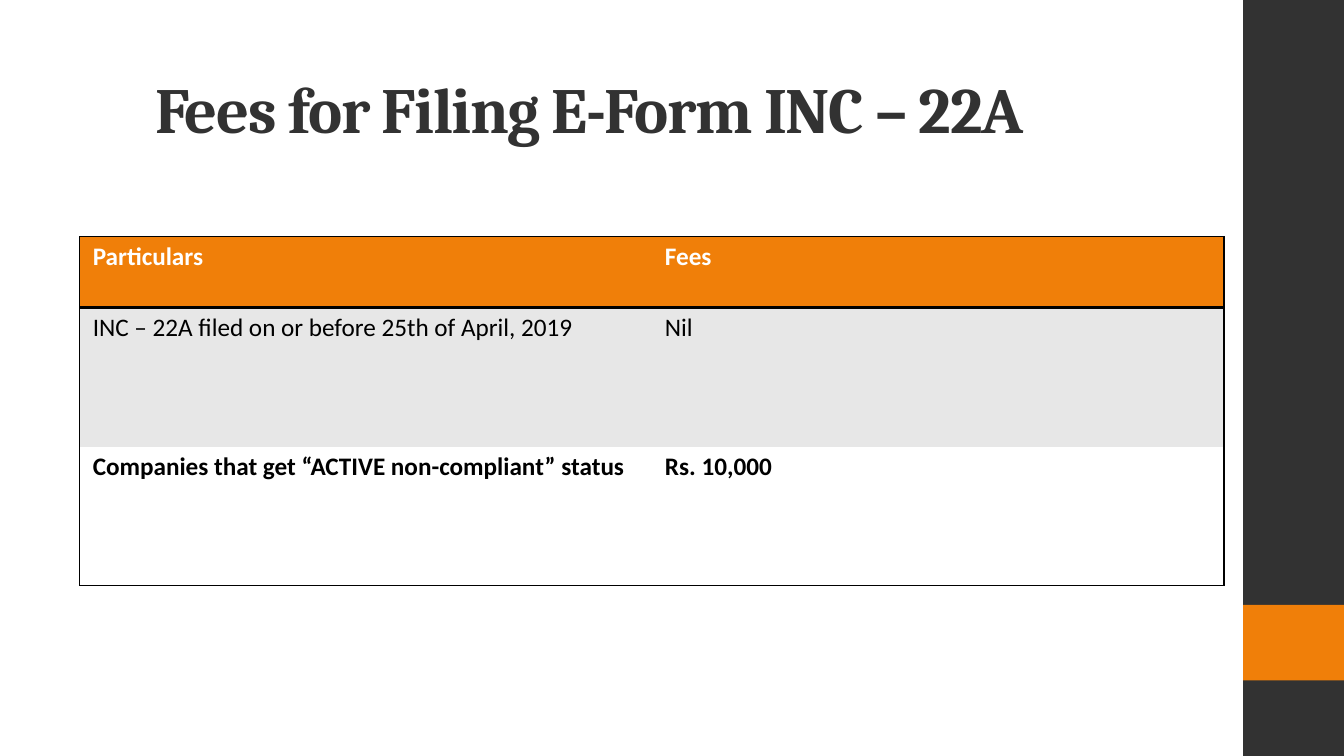
from lxml.etree import SubElement
from pptx import Presentation
from pptx.dml.color import RGBColor
from pptx.enum.shapes import MSO_SHAPE
from pptx.enum.text import MSO_ANCHOR
from pptx.oxml.ns import qn
from pptx.util import Inches, Pt

TITLE = "Fees for Filing E-Form INC – 22A"
FEE_ROWS = [
    ("Particulars", "Fees"),
    ("INC – 22A filed on or before 25th of April, 2019", "Nil"),
    ("Companies that get “ACTIVE non-compliant” status", "Rs. 10,000"),
]

DARK = RGBColor(0x32, 0x32, 0x32)
ORANGE = RGBColor(0xF0, 0x7F, 0x09)
GREY = RGBColor(0xE7, 0xE7, 0xE7)
WHITE = RGBColor(0xFF, 0xFF, 0xFF)
BLACK = RGBColor(0, 0, 0)

ROW_STYLES = [
    (0.7, ORANGE, WHITE, True),
    (1.38, GREY, BLACK, False),
    (1.38, WHITE, BLACK, True),
]
SIDEBAR_PARTS = [(0, 7.5, DARK), (6, 0.75, ORANGE)]


def format_run(run, font, size, color, bold):
    run.font.name = font
    run.font.size = Pt(size)
    run.font.color.rgb = color
    run.font.bold = bold


def add_sidebar(slide):
    for top, height, color in SIDEBAR_PARTS:
        shape = slide.shapes.add_shape(
            MSO_SHAPE.RECTANGLE, Inches(12.33), Inches(top), Inches(1), Inches(height))
        shape.shadow.inherit = False
        shape.fill.solid()
        shape.fill.fore_color.rgb = color
        shape.line.fill.background()


def add_title(slide):
    box = slide.shapes.add_textbox(Inches(1.44), Inches(0.44), Inches(10.18), Inches(1.25))
    frame = box.text_frame
    frame.word_wrap = True
    frame.vertical_anchor = MSO_ANCHOR.MIDDLE
    frame.text = TITLE
    run = frame.paragraphs[0].runs[0]
    format_run(run, "Cambria", 46, DARK, True)
    run.font._element.set("spc", "-100")


def set_borders(cell, widths):
    properties = cell._tc.get_or_add_tcPr()
    for side in "LRTB":
        width = widths.get(side, 0)
        line = SubElement(properties, qn(f"a:ln{side}"), w=str(Pt(width)))
        if width:
            fill = SubElement(line, qn("a:solidFill"))
            SubElement(fill, qn("a:srgbClr"), val=str(BLACK))
        else:
            SubElement(line, qn("a:noFill"))


def add_fee_table(slide):
    row_count, column_count = len(FEE_ROWS), len(FEE_ROWS[0])
    table = slide.shapes.add_table(
        row_count, column_count, Inches(0.79), Inches(2.35), Inches(11.35), Inches(3.46)).table
    table.first_row = False
    table.horz_banding = False
    for row, (texts, style) in enumerate(zip(FEE_ROWS, ROW_STYLES)):
        height, fill_color, text_color, bold = style
        table.rows[row].height = Inches(height)
        for column, text in enumerate(texts):
            cell = table.cell(row, column)
            cell.margin_left = cell.margin_right = Inches(0.13)
            cell.margin_top = cell.margin_bottom = Inches(0.05)
            cell.text_frame.text = text
            format_run(cell.text_frame.paragraphs[0].runs[0], "Calibri", 18, text_color, bold)
            set_borders(cell, {
                "L": 1 if column == 0 else 0,
                "R": 1 if column == column_count - 1 else 0,
                "T": {0: 1, 1: 2}.get(row, 0),
                "B": {0: 2, row_count - 1: 1}.get(row, 0),
            })
            cell.fill.solid()
            cell.fill.fore_color.rgb = fill_color


def main():
    presentation = Presentation()
    presentation.slide_width = Inches(13.33)
    presentation.slide_height = Inches(7.5)
    slide = presentation.slides.add_slide(presentation.slide_layouts[6])
    add_sidebar(slide)
    add_title(slide)
    add_fee_table(slide)
    presentation.save("out.pptx")


if __name__ == "__main__":
    main()
